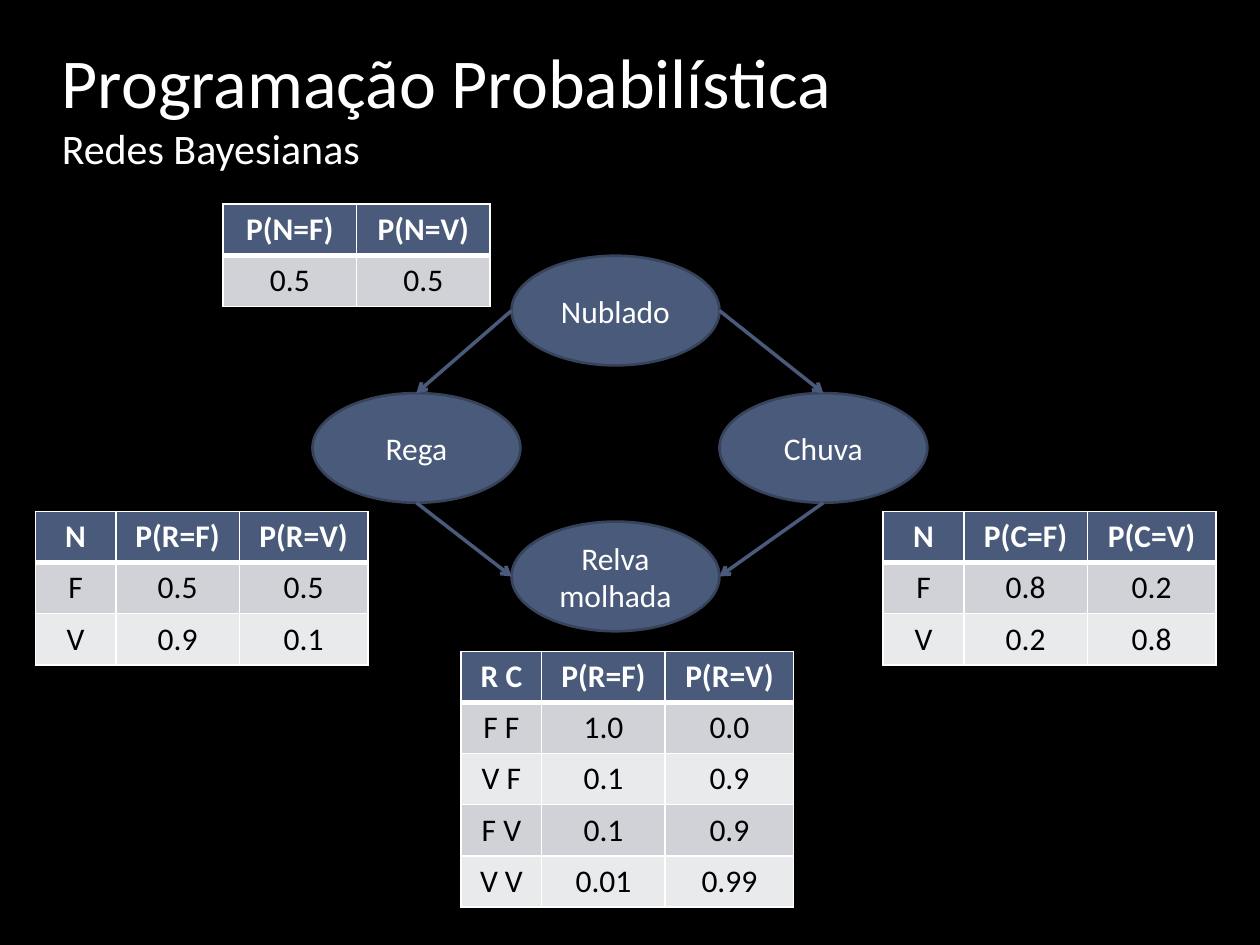
from dataclasses import dataclass

import lxml.etree
import pptx
import pptx.dml.color
import pptx.enum.shapes
import pptx.enum.text
import pptx.oxml
import pptx.oxml.ns
import pptx.util

Inches = pptx.util.Inches
Pt = pptx.util.Pt
qn = pptx.oxml.ns.qn
ALIGN = pptx.enum.text.PP_ALIGN
ANCHOR = pptx.enum.text.MSO_ANCHOR


@dataclass(frozen=True)
class Theme:
    font: str = "Calibri"
    background: str = "000000"
    light: str = "FFFFFF"
    dark: str = "000000"
    accent: str = "4A5A7A"
    outline: str = "37435A"
    bands: tuple[str, str] = ("D0D2D7", "E9EAEC")
    title_size: int = 40
    subtitle_size: int = 24
    body_size: int = 18


@dataclass(frozen=True)
class Node:
    label: str
    left: float
    top: float
    width: float = 1.65
    height: float = 0.87

    def side(self, across: float, down: float) -> tuple[float, float]:
        """Point at a fraction of the node's width and height."""
        return self.left + across * self.width, self.top + down * self.height


@dataclass(frozen=True)
class ProbabilityTable:
    left: float
    top: float
    rows: tuple[tuple[str, ...], ...]
    columns: tuple[float, ...] = (0.64, 0.98, 1.02)


THEME = Theme()
ROW_HEIGHT = 0.405
LEFT, RIGHT, TOP, BOTTOM = (0, 0.5), (1, 0.5), (0.5, 0), (0.5, 1)

CLOUDY = Node("Nublado", 4.06, 2.03)
SPRINKLER = Node("Rega", 2.48, 3.12)
RAIN = Node("Chuva", 5.71, 3.12)
WET_GRASS = Node("Relva molhada", 4.06, 4.14)
NODES = (CLOUDY, WET_GRASS, RAIN, SPRINKLER)
EDGES = (
    (CLOUDY.side(*LEFT), SPRINKLER.side(*TOP)),
    (CLOUDY.side(*RIGHT), RAIN.side(*TOP)),
    (SPRINKLER.side(*BOTTOM), WET_GRASS.side(*LEFT)),
    (RAIN.side(*BOTTOM), WET_GRASS.side(*RIGHT)),
)
TABLES = (
    ProbabilityTable(1.77, 1.62, (("P(N=F)", "P(N=V)"), ("0.5", "0.5")), (1.06, 1.06)),
    ProbabilityTable(0.28, 4.06, (
        ("N", "P(R=F)", "P(R=V)"), ("F", "0.5", "0.5"), ("V", "0.9", "0.1"))),
    ProbabilityTable(7.01, 4.06, (
        ("N", "P(C=F)", "P(C=V)"), ("F", "0.8", "0.2"), ("V", "0.2", "0.8"))),
    ProbabilityTable(3.66, 5.17, (
        ("R C", "P(R=F)", "P(R=V)"), ("F F", "1.0", "0.0"), ("V F", "0.1", "0.9"),
        ("F V", "0.1", "0.9"), ("V V", "0.01", "0.99"))),
)


def rgb(value: str) -> pptx.dml.color.RGBColor:
    return pptx.dml.color.RGBColor.from_string(value)


def add_span(para, text: str, size: int, color: str, bold: bool = False) -> None:
    span = para.add_run()
    span.text = text
    span.font.name = THEME.font
    span.font.size = Pt(size)
    span.font.bold = bold
    span.font.color.rgb = rgb(color)


def write_title(page) -> None:
    title = page.shapes.title
    title.left, title.top = Inches(0.39), Inches(0.25)
    title.width, title.height = Inches(8.4), Inches(1.17)
    frame = title.text_frame
    frame.word_wrap = True
    frame.auto_size = pptx.enum.text.MSO_AUTO_SIZE.NONE
    frame.vertical_anchor = ANCHOR.BOTTOM
    para = frame.paragraphs[0]
    para.alignment = ALIGN.LEFT
    para.space_before = Pt(4)
    add_span(para, "Programação Probabilística", THEME.title_size, THEME.light)
    para.add_line_break()
    add_span(para, "Redes Bayesianas", THEME.subtitle_size, THEME.light)


def draw_node(page, node: Node) -> None:
    oval = page.shapes.add_shape(
        pptx.enum.shapes.MSO_SHAPE.OVAL,
        Inches(node.left), Inches(node.top), Inches(node.width), Inches(node.height))
    oval.shadow.inherit = False
    oval.fill.solid()
    oval.fill.fore_color.rgb = rgb(THEME.accent)
    oval.line.color.rgb = rgb(THEME.outline)
    oval.line.width = Pt(1.5)
    frame = oval.text_frame
    frame.word_wrap = True
    frame.vertical_anchor = ANCHOR.MIDDLE
    para = frame.paragraphs[0]
    para.alignment = ALIGN.CENTER
    add_span(para, node.label, THEME.body_size, THEME.light)


def draw_arrow(page, start: tuple[float, float], end: tuple[float, float]) -> None:
    arrow = page.shapes.add_connector(
        pptx.enum.shapes.MSO_CONNECTOR.STRAIGHT,
        *(Inches(length) for length in start + end))
    arrow.line.color.rgb = rgb(THEME.accent)
    arrow.line.width = Pt(2)
    properties = arrow.element.spPr
    lxml.etree.SubElement(properties.find(qn("a:ln")), qn("a:tailEnd"), type="arrow")
    lxml.etree.SubElement(properties, qn("a:effectLst"))


def set_borders(cell, top: float, bottom: float) -> None:
    """Line all four sides; the side lines are always one point wide."""
    properties = cell._tc.get_or_add_tcPr()
    widths = {"a:lnL": 1, "a:lnR": 1, "a:lnT": top, "a:lnB": bottom}
    for position, (tag, width) in enumerate(widths.items()):
        line = lxml.etree.Element(qn(tag), w=str(Pt(width)))
        fill = lxml.etree.SubElement(line, qn("a:solidFill"))
        lxml.etree.SubElement(fill, qn("a:srgbClr"), val=THEME.light)
        properties.insert(position, line)


def draw_table(page, spec_table: ProbabilityTable) -> None:
    row_count = len(spec_table.rows)
    table = page.shapes.add_table(
        row_count, len(spec_table.columns), Inches(spec_table.left), Inches(spec_table.top),
        Inches(sum(spec_table.columns)), Inches(ROW_HEIGHT * row_count)).table
    for column, width in zip(table.columns, spec_table.columns):
        column.width = Inches(width)
    for row_index, texts in enumerate(spec_table.rows):
        header = row_index == 0
        table.rows[row_index].height = Inches(ROW_HEIGHT)
        for column_index, text in enumerate(texts):
            cell = table.cell(row_index, column_index)
            cell.fill.solid()
            cell.fill.fore_color.rgb = rgb(
                THEME.accent if header else THEME.bands[(row_index - 1) % 2])
            set_borders(cell, top=3 if row_index == 1 else 1, bottom=3 if header else 1)
            para = cell.text_frame.paragraphs[0]
            para.alignment = ALIGN.CENTER
            add_span(para, text, THEME.body_size,
                     THEME.light if header else THEME.dark, bold=header)


def main() -> None:
    deck = pptx.Presentation()
    deck.slide_width, deck.slide_height = Inches(10), Inches(7.5)
    page = deck.slides.add_slide(deck.slide_layouts.get_by_name("Title Only"))
    page.background.fill.solid()
    page.background.fill.fore_color.rgb = rgb(THEME.background)
    write_title(page)
    for node in NODES:
        draw_node(page, node)
    for start, end in EDGES:
        draw_arrow(page, start, end)
    for table in TABLES:
        draw_table(page, table)
    deck.save("out.pptx")


if __name__ == "__main__":
    main()
